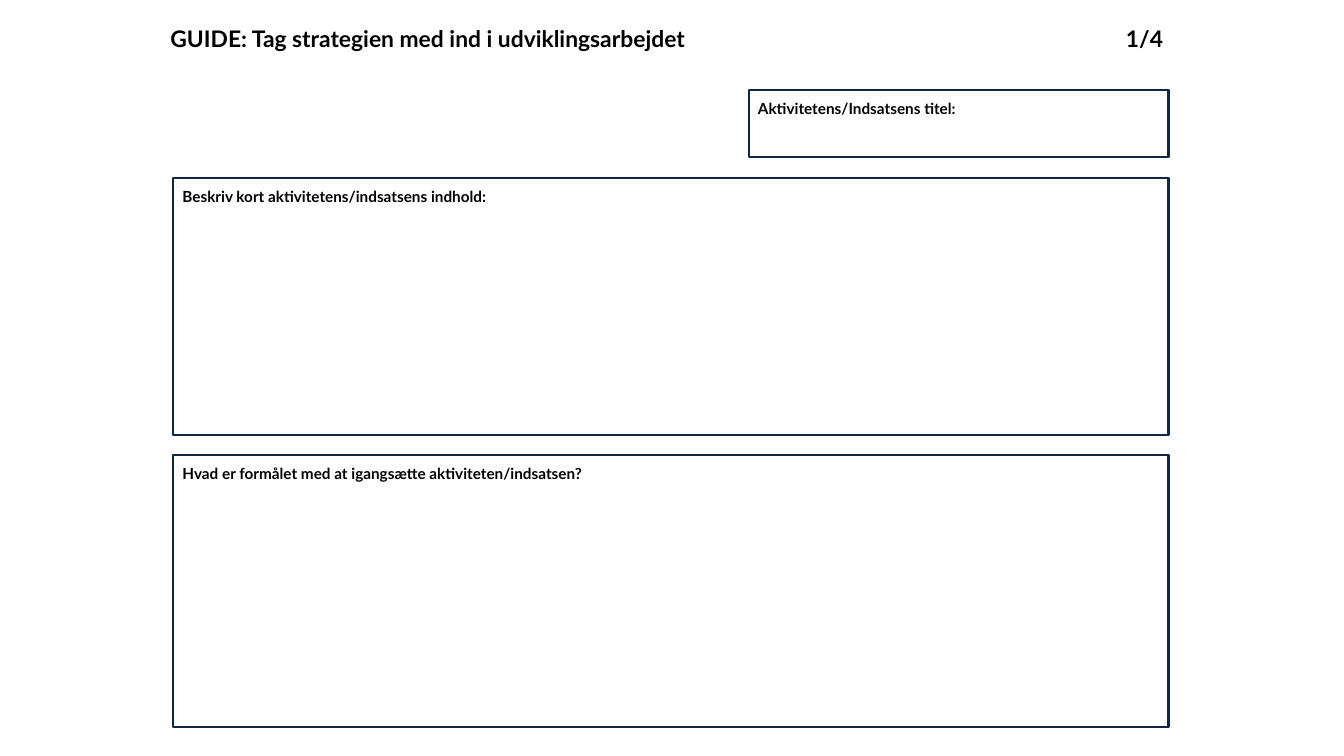
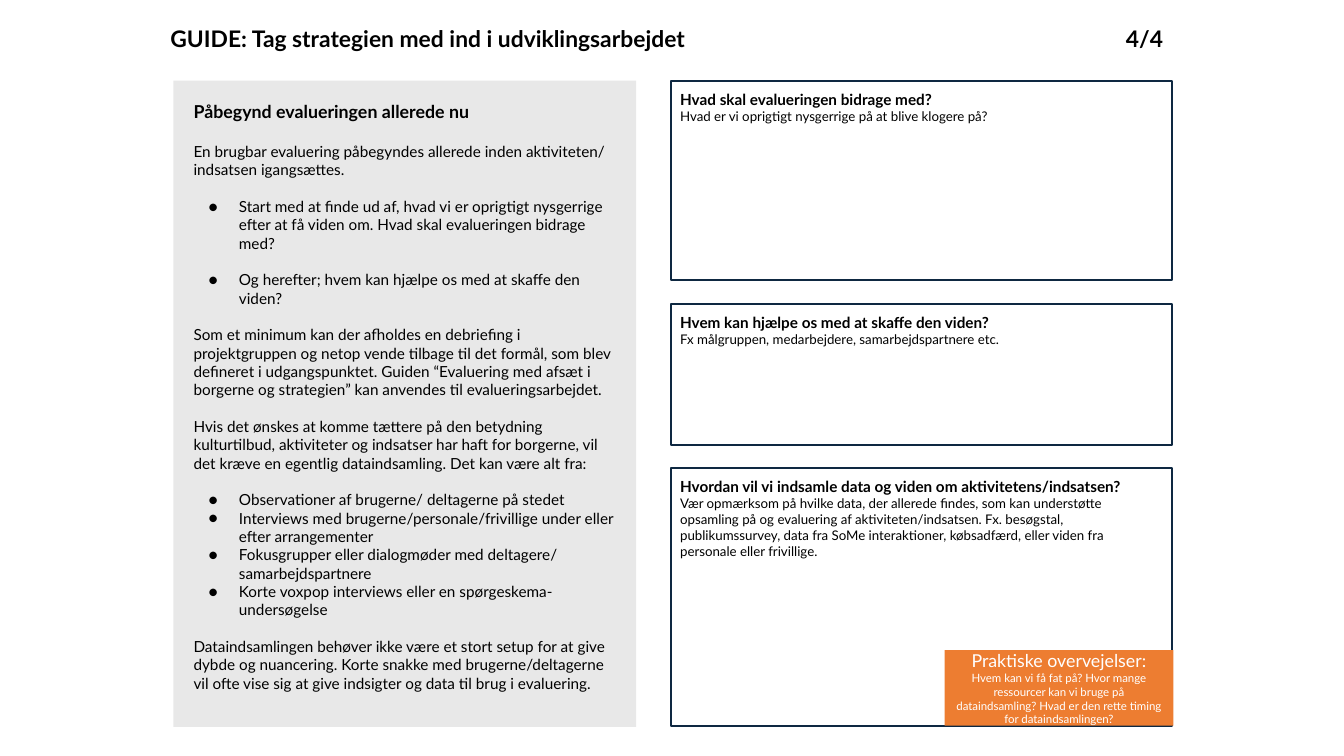
from pptx import Presentation
from pptx.dml.color import RGBColor
from pptx.enum.shapes import MSO_SHAPE as Shape
from pptx.enum.text import MSO_ANCHOR as Anchor, MSO_AUTO_SIZE as Fit, PP_ALIGN as Align
from pptx.util import Inches, Pt
from lxml.etree import SubElement
from pptx.oxml.ns import qn

WIDE, HIGH = Inches(13.33), Inches(7.5)
FONT = "Lato"
BLACK, WHITE, NAVY, GREY, ORANGE = "000000", "FFFFFF", "0E2841", "E8E8E8", "ED7D31"
HEAD, LEAD, BASE, SMALL, TINY = 16.3, 12.7, 10.9, 9.5, 8.2
GAP = 13.1
LEFT, RIGHT = 12.9, 86.95
TITLE = "GUIDE: Tag strategien med ind i udviklingsarbejdet"

GUIDE = [
    ("Påbegynd evalueringen allerede nu", "lead", 0),
    ("En brugbar evaluering påbegyndes allerede inden aktiviteten/ indsatsen igangsættes.", "plain", 14.2),
    ("Start med at finde ud af, hvad vi er oprigtigt nysgerrige efter at få viden om. "
     "Hvad skal evalueringen bidrage med?", "dot", GAP),
    ("Og herefter; hvem kan hjælpe os med at skaffe den viden?", "dot", GAP),
    ("Som et minimum kan der afholdes en debriefing i projektgruppen og netop vende tilbage "
     "til det formål, som blev defineret i udgangspunktet. Guiden “Evaluering med afsæt i "
     "borgerne og strategien” kan anvendes til evalueringsarbejdet.", "plain", GAP),
    ("Hvis det ønskes at komme tættere på den betydning kulturtilbud, aktiviteter og indsatser "
     "har haft for borgerne, vil det kræve en egentlig dataindsamling. Det kan være alt fra:", "plain", GAP),
    ("Observationer af brugerne/ deltagerne på stedet", "dot", GAP),
    ("Interviews med brugerne/personale/frivillige under eller efter arrangementer", "dot", 0),
    ("Fokusgrupper eller dialogmøder med deltagere/ samarbejdspartnere", "dot", 0),
    ("Korte voxpop interviews eller en spørgeskema- undersøgelse", "dot", 0),
    ("Dataindsamlingen behøver ikke være et stort setup for at give dybde og nuancering. "
     "Korte snakke med brugerne/deltagerne vil ofte vise sig at give indsigter og data "
     "til brug i evaluering.", "plain", GAP),
]


def tint(code):
    """Turn a hex string into a colour."""
    return RGBColor.from_string(code)


def span(left, top, width, height):
    """Turn percent shares of the slide into lengths."""
    return [int(WIDE * left / 100), int(HIGH * top / 100),
            int(WIDE * width / 100), int(HIGH * height / 100)]


def place(item, *area):
    """Move a placeholder to an area of the slide."""
    item.left, item.top, item.width, item.height = span(*area)


def frame(item, pad, anchor=Anchor.TOP):
    """Set wrapping, anchor and equal insets of a text frame."""
    text = item.text_frame
    text.word_wrap, text.auto_size, text.vertical_anchor = True, Fit.NONE, anchor
    text.margin_left = text.margin_right = Inches(pad)
    text.margin_top = text.margin_bottom = Inches(pad)
    return text


def style(para, size, bold=False, colour=BLACK, align=Align.LEFT, before=0):
    """Format a paragraph and its runs."""
    para.alignment, para.space_before = align, Pt(before)
    for run in para.runs:
        font = run.font
        font.name, font.size, font.bold = FONT, Pt(size), bold
        font.color.rgb = tint(colour)


def write(text, parts, **look):
    """Write one paragraph for each (words, size, bold) part."""
    text.text = "\n".join(words for words, *_ in parts)
    for para, (_, size, bold) in zip(text.paragraphs, parts):
        style(para, size, bold, **look)


def mark(para, dot):
    """Give a paragraph a hanging bullet, or none."""
    props = para._p.get_or_add_pPr()
    props.set("marL", str(Inches(0.45 if dot else 0)))
    props.set("indent", str(Inches(-0.3 if dot else 0)))
    if dot:
        SubElement(SubElement(props, qn("a:buClr")), qn("a:srgbClr"), val=BLACK)
        SubElement(props, qn("a:buFont"), typeface=FONT)
        SubElement(props, qn("a:buChar"), char="●")
    else:
        SubElement(props, qn("a:buNone"))


def block(slide, area, fill=None, line=None):
    """Add a flat rectangle with an optional fill and outline."""
    item = slide.shapes.add_shape(Shape.RECTANGLE, *span(*area))
    item.shadow.inherit = False
    if fill:
        item.fill.solid()
        item.fill.fore_color.rgb = tint(fill)
    else:
        item.fill.background()
    if line:
        item.line.color.rgb, item.line.width = tint(line), Pt(1.5)
    else:
        item.line.fill.background()
    return item


def field(slide, area, ask, hint=None):
    """Add an outlined answer box with a question and a hint."""
    parts = [(ask, BASE, True)] + ([(hint, SMALL, False)] if hint else [])
    write(frame(block(slide, area, line=NAVY), 0.09), parts)


def stack(slide, top, gap, rows):
    """Set answer boxes below each other with an equal gap."""
    for left, width, height, *words in rows:
        field(slide, (left, top, width, height), *words)
        top += height + gap


def page(deck, layout, count):
    """Add a slide with the shared title and page count."""
    slide = deck.slides.add_slide(deck.slide_layouts[layout])
    title = slide.shapes.title
    place(title, 11.78, 2.13, 66.1, 8.53)
    write(frame(title, 0.12), [(TITLE, HEAD, True)])
    title.text_frame.paragraphs[0].line_spacing = 0.9
    box = slide.shapes.add_textbox(*span(80.1, 2.13, 7.12, 6.13))
    write(frame(box, 0.09), [(count, HEAD, True)], align=Align.RIGHT)
    return slide


def panel(slide):
    """Fill the body placeholder with the grey guide text."""
    body = slide.placeholders[1]
    place(body, LEFT, 10.67, 34.43, 85.47)
    body.fill.solid()
    body.fill.fore_color.rgb = tint(GREY)
    text = frame(body, 0.2)
    text.text = "\n".join(words for words, *_ in GUIDE)
    for para, (_, kind, before) in zip(text.paragraphs, GUIDE):
        lead = kind == "lead"
        mark(para, kind == "dot")
        style(para, LEAD if lead else BASE, lead, before=before)


def note(slide):
    """Add the orange box with practical points."""
    text = frame(block(slide, (70.28, 86, 17.03, 10), fill=ORANGE), 0.1, Anchor.MIDDLE)
    text.margin_top = text.margin_bottom = Inches(0.05)
    write(text, [
        ("Praktiske overvejelser:", LEAD, False),
        ("Hvem kan vi få fat på? Hvor mange ressourcer kan vi bruge på dataindsamling? "
         "Hvad er den rette timing for dataindsamlingen?", TINY, False),
    ], colour=WHITE, align=Align.CENTER)


def main():
    """Build and save both slides."""
    deck = Presentation()
    deck.slide_width, deck.slide_height = WIDE, HIGH

    first = page(deck, 5, "1/4")
    full, half = RIGHT - LEFT, 55.72
    stack(first, 11.87, 2.7, [
        (half, RIGHT - half, 8.93, "Aktivitetens/Indsatsens titel:"),
        (LEFT, full, 34, "Beskriv kort aktivitetens/indsatsens indhold:"),
        (LEFT, full, 36, "Hvad er formålet med at igangsætte aktiviteten/indsatsen?"),
    ])

    last = page(deck, 1, "4/4")
    panel(last)
    side, width = 49.93, 37.28
    stack(last, 10.67, 3.1, [
        (side, width, 26.4, "Hvad skal evalueringen bidrage med?",
         "Hvad er vi oprigtigt nysgerrige på at blive klogere på?"),
        (side, width, 18.67, "Hvem kan hjælpe os med at skaffe den viden?",
         "Fx målgruppen, medarbejdere, samarbejdspartnere etc."),
        (side, width, 34.13, "Hvordan vil vi indsamle data og viden om aktivitetens/indsatsen?",
         "Vær opmærksom på hvilke data, der allerede findes, som kan understøtte opsamling på og "
         "evaluering af aktiviteten/indsatsen. Fx. besøgstal, publikumssurvey, data fra SoMe "
         "interaktioner, købsadfærd, eller viden fra personale eller frivillige."),
    ])
    note(last)
    deck.save("out.pptx")


if __name__ == "__main__":
    main()
